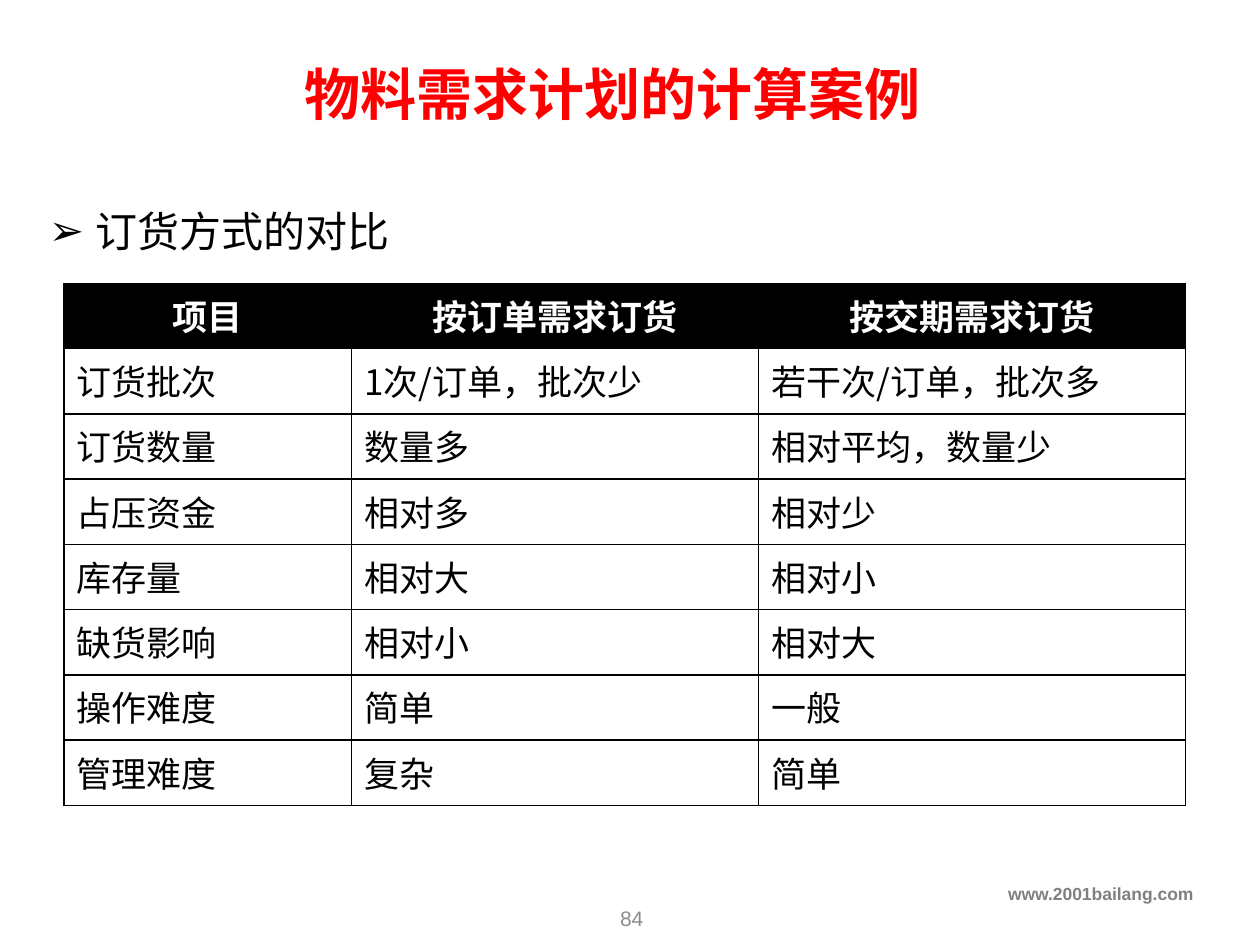
from lxml import etree
from pptx import Presentation
from pptx.dml.color import RGBColor
from pptx.enum.text import MSO_ANCHOR, PP_ALIGN
from pptx.oxml.ns import qn
from pptx.util import Pt

LEFT, CENTER, RIGHT = PP_ALIGN.LEFT, PP_ALIGN.CENTER, PP_ALIGN.RIGHT
TOP, MIDDLE = MSO_ANCHOR.TOP, MSO_ANCHOR.MIDDLE
SANS, LATIN = "Noto Sans CJK SC", "Arial"
COLORS = {
    "black": "000000",
    "white": "FFFFFF",
    "red": "FF0000",
    "grey": "808080",
    "pale": "8C8C8C",
}
STYLES = {
    "title": {"name": SANS, "size": Pt(32), "bold": True, "color": "red"},
    "point": {"name": LATIN, "size": Pt(24), "bold": False, "color": "black"},
    "head": {"name": SANS, "size": Pt(20), "bold": True, "color": "white"},
    "cell": {"name": SANS, "size": Pt(20), "bold": False, "color": "black"},
    "site": {"name": LATIN, "size": Pt(10), "bold": True, "color": "grey"},
    "page": {"name": LATIN, "size": Pt(12), "bold": False, "color": "pale"},
}
ROWS = [
    ("项目", "按订单需求订货", "按交期需求订货"),
    ("订货批次", "1次/订单，批次少", "若干次/订单，批次多"),
    ("订货数量", "数量多", "相对平均，数量少"),
    ("占压资金", "相对多", "相对少"),
    ("库存量", "相对大", "相对小"),
    ("缺货影响", "相对小", "相对大"),
    ("操作难度", "简单", "一般"),
    ("管理难度", "复杂", "简单"),
]
WIDTHS = (164.2, 232.6, 244)
EDGES = ("a:lnL", "a:lnR", "a:lnT", "a:lnB")


def rgb(key):
    return RGBColor.from_string(COLORS[key])


def add(parent, tag, **attrs):
    node = etree.SubElement(parent, qn(tag))
    for key, value in attrs.items():
        node.set(key, str(value))
    return node


def write(frame, text, style, align=LEFT):
    """Fill the first paragraph with one styled run."""
    para = frame.paragraphs[0]
    para.alignment = align
    run = para.add_run()
    run.text = text
    for key, value in STYLES[style].items():
        if key == "color":
            run.font.color.rgb = rgb(value)
        else:
            setattr(run.font, key, value)
    add(run.font._element, "a:ea", typeface=SANS)
    return para


def label(slide, box, text, style, align=LEFT, anchor=TOP, wrap=True):
    shape = slide.shapes.add_textbox(*map(Pt, box))
    frame = shape.text_frame
    frame.word_wrap = wrap
    frame.vertical_anchor = anchor
    return write(frame, text, style, align)


def point(slide, box, text):
    """Add a line of text with an arrow bullet and a hanging indent."""
    props = label(slide, box, text, "point")._p.get_or_add_pPr()
    hang = Pt(26.6)
    props.set("marL", str(hang))
    props.set("indent", str(-hang))
    add(props, "a:buFont", typeface=LATIN)
    add(props, "a:buChar", char="➢")


def border(cell):
    props = cell._tc.get_or_add_tcPr()
    for spot, tag in enumerate(EDGES):
        line = etree.Element(qn(tag), w=str(Pt(1)))
        fill = add(line, "a:solidFill")
        add(fill, "a:srgbClr", val=COLORS["black"])
        props.insert(spot, line)


def grid(slide, box, rows, widths):
    table = slide.shapes.add_table(len(rows), len(widths), *map(Pt, box)).table
    for col, width in zip(table.columns, widths):
        col.width = Pt(width)
    for r, texts in enumerate(rows):
        table.rows[r].height = Pt(box[3] / len(rows))
        style, fill, align = ("cell", "white", LEFT) if r else ("head", "black", CENTER)
        for c, text in enumerate(texts):
            cell = table.cell(r, c)
            cell.fill.solid()
            cell.fill.fore_color.rgb = rgb(fill)
            border(cell)
            write(cell.text_frame, text, style, align)


def footer(slide, box):
    left, top, width, height = box
    label(slide, (left, top, width, 25.2), "www.2001bailang.com", "site", RIGHT)
    label(slide, (left + 280, top + 9.4, 162, height - 9.4), "84", "page",
          CENTER, MIDDLE)


def main():
    deck = Presentation()
    deck.slide_width, deck.slide_height = Pt(720), Pt(540)
    slide = deck.slides.add_slide(deck.slide_layouts[6])
    footer(slide, (0, 501.1, 689, 38.2))
    point(slide, (20.9, 114, 680.4, 33.8), "订货方式的对比")
    grid(slide, (36.7, 162, 640.8, 298.4), ROWS, WIDTHS)
    label(slide, (167, 30, 370, 46), "物料需求计划的计算案例", "title",
          anchor=MIDDLE, wrap=False)
    deck.save("out.pptx")


if __name__ == "__main__":
    main()
